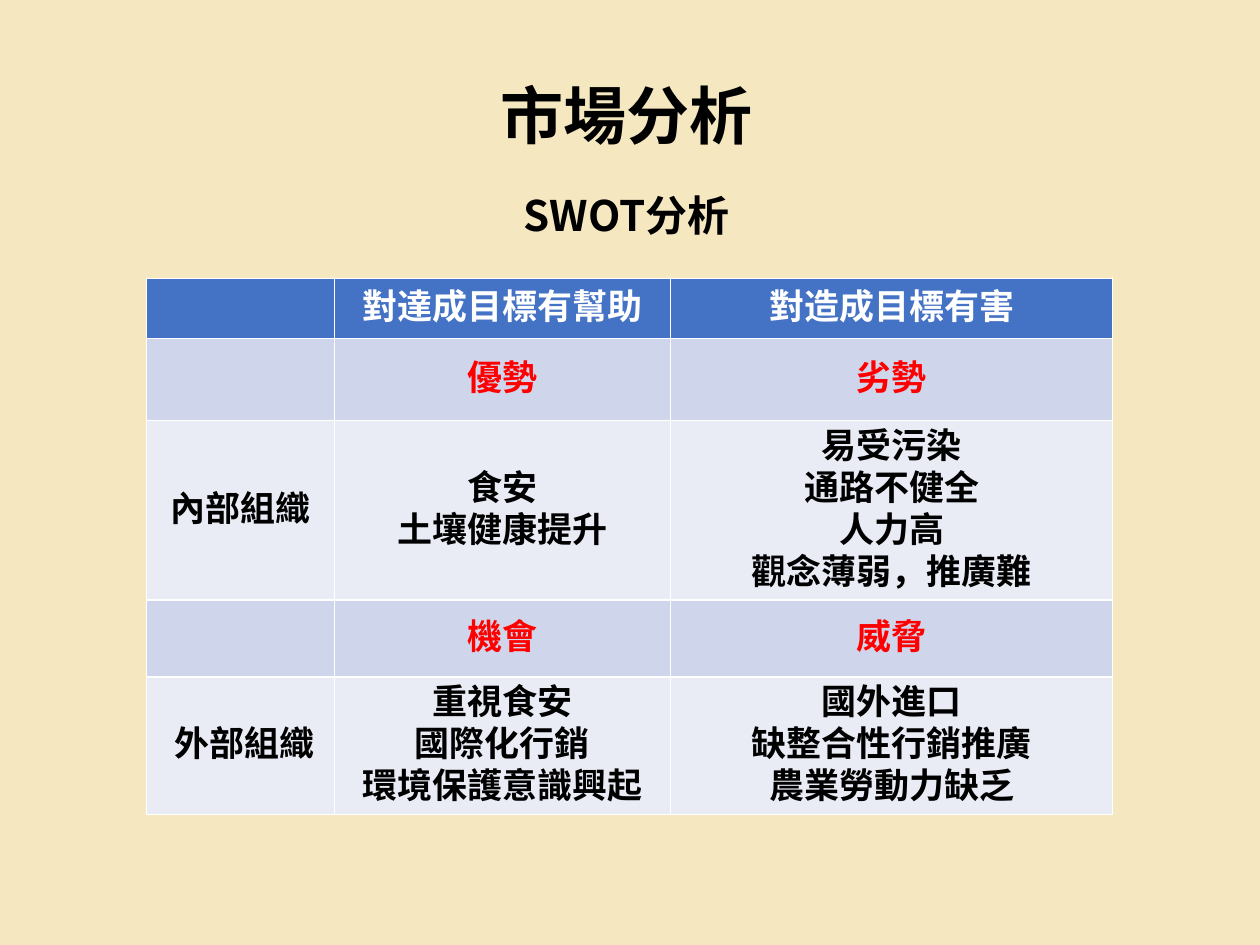
from dataclasses import dataclass

from lxml.etree import SubElement
from pptx import Presentation
from pptx.dml.color import RGBColor as RGB
from pptx.enum.text import MSO_ANCHOR as Anchor, MSO_AUTO_SIZE as AutoSize, PP_ALIGN as Align
from pptx.oxml import parse_xml
from pptx.oxml.ns import nsdecls, qn
from pptx.slide import Slide
from pptx.util import Pt

COLORS = {
    "background": "F5E8C1",
    "header": "4472C4",
    "heading_row": "CFD5EA",
    "detail_row": "E9EBF5",
    "border": "FFFFFF",
    "light": "FFFFFF",
    "dark": "000000",
    "accent": "FF0000",
}
COLUMNS = [161.3, 288, 379.4]
ROWS = [
    (52, "header", "light", ["", "對達成目標有幫助", "對造成目標有害"]),
    (70, "heading_row", "accent", ["", "優勢", "劣勢"]),
    (154, "detail_row", "dark", [
        "內部組織",
        "食安\n土壤健康提升",
        "易受污染\n通路不健全\n人力高\n觀念薄弱，推廣難",
    ]),
    (66, "heading_row", "accent", ["", "機會", "威脅"]),
    (118, "detail_row", "dark", [
        " 外部組織",
        "重視食安\n國際化行銷\n環境保護意識興起",
        "國外進口\n缺整合性行銷推廣\n農業勞動力缺乏",
    ]),
]


@dataclass
class SlideBuilder:
    """Draws styled elements on the current slide."""

    s: Slide
    font: str = "Noto Sans CJK SC"
    cell_size: float = 30
    cell_leading: float = 36
    cell_margin: float = 5
    border_width: float = 1.06

    def background(self, color):
        fill = self.s.background.fill
        fill.solid()
        fill.fore_color.rgb = RGB.from_string(COLORS[color])

    def format_text(self, tf, size, color, leading=None, tracking=None):
        for p in tf.paragraphs:
            p.alignment = Align.CENTER
            if leading:
                p.line_spacing = Pt(leading)
            for r in p.runs:
                r.font.size = Pt(size)
                r.font.bold = True
                r.font.name = self.font
                r.font.color.rgb = RGB.from_string(COLORS[color])
                props = r.font._element
                SubElement(props, qn("a:ea"), typeface=self.font)
                if tracking:
                    props.set("spc", str(round(tracking * 100)))

    def text(self, text, box, size, margins=None, **style):
        tf = self.s.shapes.add_textbox(*map(Pt, box)).text_frame
        tf.word_wrap = True
        tf.auto_size = AutoSize.SHAPE_TO_FIT_TEXT
        if margins is not None:
            tf.margin_left = tf.margin_right = Pt(margins)
            tf.margin_top = tf.margin_bottom = Pt(margins)
        tf.text = text
        self.format_text(tf, size, "dark", **style)

    def cell(self, cell, text, fill, color):
        cell.text_frame.text = text
        cell.vertical_anchor = Anchor.MIDDLE
        cell.margin_left = cell.margin_right = Pt(self.cell_margin)
        cell.margin_top = cell.margin_bottom = Pt(self.cell_margin)
        self.format_text(cell.text_frame, self.cell_size, color, self.cell_leading)
        cell.fill.solid()
        cell.fill.fore_color.rgb = RGB.from_string(COLORS[fill])
        for i, side in enumerate(("lnL", "lnR", "lnT", "lnB")):
            line = parse_xml(
                f'<a:{side} {nsdecls("a")} w="{Pt(self.border_width)}"><a:solidFill>'
                f'<a:srgbClr val="{COLORS["border"]}"/></a:solidFill></a:{side}>'
            )
            cell._tc.get_or_add_tcPr().insert(i, line)

    def table(self, left, top, columns, rows):
        height = sum(row[0] for row in rows)
        box = map(Pt, (left, top, sum(columns), height))
        table = self.s.shapes.add_table(len(rows), len(columns), *box).table
        for column, width in zip(table.columns, columns):
            column.width = Pt(width)
        for row, (height, fill, color, texts) in zip(table.rows, rows):
            row.height = Pt(height)
            for cell, text in zip(row.cells, texts):
                self.cell(cell, text, fill, color)


def main():
    prs = Presentation()
    prs.slide_width, prs.slide_height = Pt(1080), Pt(810)
    builder = SlideBuilder(prs.slides.add_slide(prs.slide_layouts[6]))
    builder.background("background")
    builder.text("市場分析", (76.3, 77, 920.9, 53.5), 54, margins=0, leading=53.5, tracking=0.1)
    builder.table(125.3, 238.3, COLUMNS, ROWS)
    builder.text("SWOT分析", (336.2, 159.1, 401.8, 51.1), 36)
    prs.save("out.pptx")


if __name__ == "__main__":
    main()
